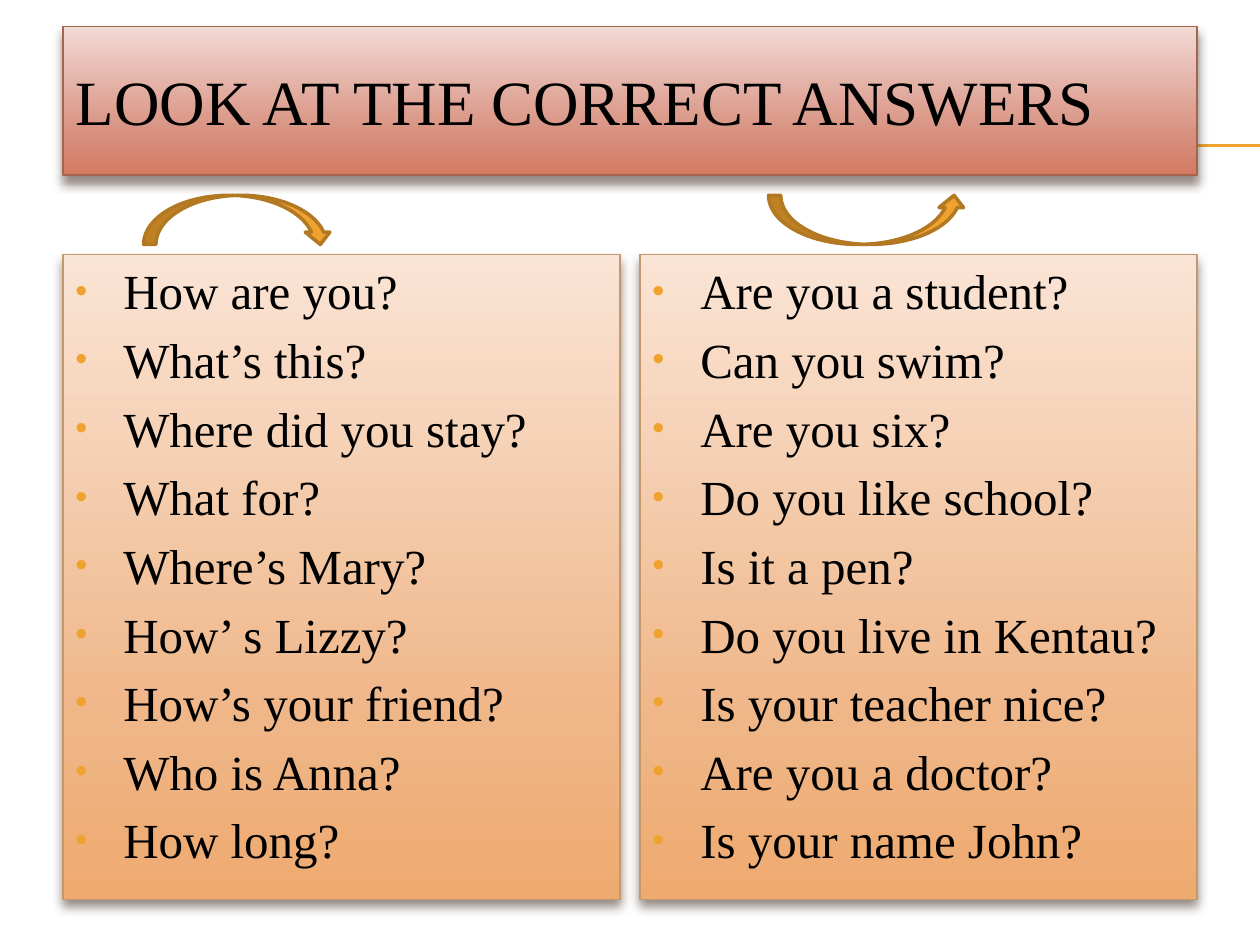
from copy import deepcopy
from dataclasses import dataclass

from pptx import Presentation
from pptx.dml.color import RGBColor
from pptx.enum.shapes import MSO_CONNECTOR as Conn, MSO_SHAPE as Geom
from pptx.enum.text import MSO_ANCHOR as Anchor, MSO_AUTO_SIZE as Fit, PP_ALIGN as Align
from pptx.oxml import parse_xml
from pptx.oxml.ns import nsdecls, qn
from pptx.util import Inches, Pt


@dataclass(frozen=True)
class Theme:
    """Colours and type sizes of the slide."""
    font: str = "Times New Roman"
    title_size: int = 36
    body_size: int = 28
    text: str = "000000"
    accent: str = "F0A22E"
    arrow_line: str = "B27822"
    shadow: str = "4E3B30"
    title_line: str = "A5644E"
    panel_line: str = "C3986D"
    title_fill: tuple[str, ...] = ("F1D9D4", "D89180", "D47A62")
    panel_fill: tuple[str, ...] = ("FAE4D5", "EFB688", "EFAA6F")
    stops: tuple[float, ...] = (0, 0.72, 1)


@dataclass(frozen=True)
class Panel:
    """A column of questions."""
    left: float
    questions: tuple[str, ...]


@dataclass(frozen=True)
class Arrow:
    """A curved arrow showing how the voice moves."""
    geom: Geom
    left: float
    width: float


THEME = Theme()
TITLE = "LOOK AT THE CORRECT ANSWERS"
RULES = (1.15, 1.16)
PANELS = (
    Panel(0.5, ("How are you?", "What’s this?", "Where did you stay?", "What for?",
                "Where’s Mary?", "How’ s Lizzy?", "How’s your friend?",
                "Who is Anna?", "How long?")),
    Panel(5.08, ("Are you a student?", "Can you swim?", "Are you six?",
                 "Do you like school?", "Is it a pen?", "Do you live in Kentau?",
                 "Is your teacher nice?", "Are you a doctor?", "Is your name John?")),
)
ARROWS = (Arrow(Geom.CURVED_DOWN_ARROW, 1.14, 1.5), Arrow(Geom.CURVED_UP_ARROW, 6.1, 1.57))


def rgb(value: str) -> RGBColor:
    """Turn a hex string into a colour."""
    return RGBColor.from_string(value)


def set_all(target, values: dict) -> None:
    """Set each named attribute on the target."""
    for name, value in values.items():
        setattr(target, name, value)


def outline(s, color: str, width: float) -> None:
    """Set the line of a shape or connector."""
    s.line.color.rgb = rgb(color)
    s.line.width = Pt(width)


def style_card(s, colors: tuple[str, ...], line: str) -> None:
    """Give a shape a downward gradient, an outline and a soft shadow."""
    s.fill.gradient()
    s.fill.gradient_angle = 270
    stops = s._element.spPr.find(qn("a:gradFill")).find(qn("a:gsLst"))
    stops.append(deepcopy(stops[-1]))
    for stop, color, position in zip(s.fill.gradient_stops, colors, THEME.stops):
        stop.color.rgb = rgb(color)
        stop.position = position
    outline(s, line, 0.79)
    s.shadow.inherit = False
    s._element.spPr.find(qn("a:effectLst")).append(parse_xml(
        f'<a:outerShdw {nsdecls("a")} blurRad="{Pt(6)}" dist="{Pt(4)}" dir="5400000" '
        f'rotWithShape="0"><a:srgbClr val="{THEME.shadow}"><a:alpha val="60000"/>'
        '</a:srgbClr></a:outerShdw>'))


def write(p, text: str, size: int) -> None:
    """Write a left-aligned paragraph."""
    p.alignment = Align.LEFT
    r = p.add_run()
    r.text = text
    set_all(r.font, {"name": THEME.font, "size": Pt(size)})
    r.font.color.rgb = rgb(THEME.text)


def add_bullet(p) -> None:
    """Give a paragraph a small coloured bullet, a hanging indent and space above."""
    pPr = p._p.get_or_add_pPr()
    pPr.set("marL", str(Inches(0.38)))
    pPr.set("indent", str(-Inches(0.38)))
    for tag, body in (
        ("spcBef", '<a:spcPct val="20000"/>'),
        ("buClr", f'<a:srgbClr val="{THEME.accent}"/>'),
        ('buSzPct val="70000"', ""),
        ('buFont typeface="Arial"', ""),
        ('buChar char="•"', ""),
    ):
        pPr.append(parse_xml(f'<a:{tag} {nsdecls("a")}>{body}</a:{tag.split()[0]}>'))


def add_rule(slide, top: float) -> None:
    """Draw a thin rule that runs to the right edge."""
    s = slide.shapes.add_connector(
        Conn.STRAIGHT, Inches(0.56), Inches(top), Inches(10), Inches(top))
    outline(s, THEME.accent, 0.75)
    s._element.spPr.append(parse_xml(f'<a:effectLst {nsdecls("a")}/>'))


def add_title(slide) -> None:
    """Place and format the title, in front of the rules."""
    s = slide.shapes.title
    set_all(s, {"left": Inches(0.5), "top": Inches(0.21),
                "width": Inches(9), "height": Inches(1.18)})
    style_card(s, THEME.title_fill, THEME.title_line)
    tf = s.text_frame
    set_all(tf, {"word_wrap": True, "auto_size": Fit.NONE, "vertical_anchor": Anchor.MIDDLE})
    write(tf.paragraphs[0], TITLE, THEME.title_size)
    slide.shapes._spTree.append(s._element)


def add_panel(slide, panel: Panel) -> None:
    """Draw a column of bulleted questions."""
    s = slide.shapes.add_shape(
        Geom.RECTANGLE, Inches(panel.left), Inches(2.02), Inches(4.42), Inches(5.12))
    style_card(s, THEME.panel_fill, THEME.panel_line)
    tf = s.text_frame
    set_all(tf, {"word_wrap": True, "vertical_anchor": Anchor.TOP})
    for i, question in enumerate(panel.questions):
        p = tf.add_paragraph() if i else tf.paragraphs[0]
        write(p, question, THEME.body_size)
        add_bullet(p)


def add_arrow(slide, arrow: Arrow) -> None:
    """Draw a curved arrow above a column."""
    s = slide.shapes.add_shape(
        arrow.geom, Inches(arrow.left), Inches(1.55), Inches(arrow.width), Inches(0.39))
    s.shadow.inherit = False
    s.fill.solid()
    s.fill.fore_color.rgb = rgb(THEME.accent)
    outline(s, THEME.arrow_line, 2)


def main() -> None:
    """Build and save the slide."""
    prs = Presentation()
    set_all(prs, {"slide_width": Inches(10), "slide_height": Inches(7.5)})
    slide = prs.slides.add_slide(prs.slide_layouts[5])
    for top in RULES:
        add_rule(slide, top)
    add_title(slide)
    for panel in PANELS:
        add_panel(slide, panel)
    for arrow in ARROWS:
        add_arrow(slide, arrow)
    prs.save("out.pptx")


if __name__ == "__main__":
    main()
